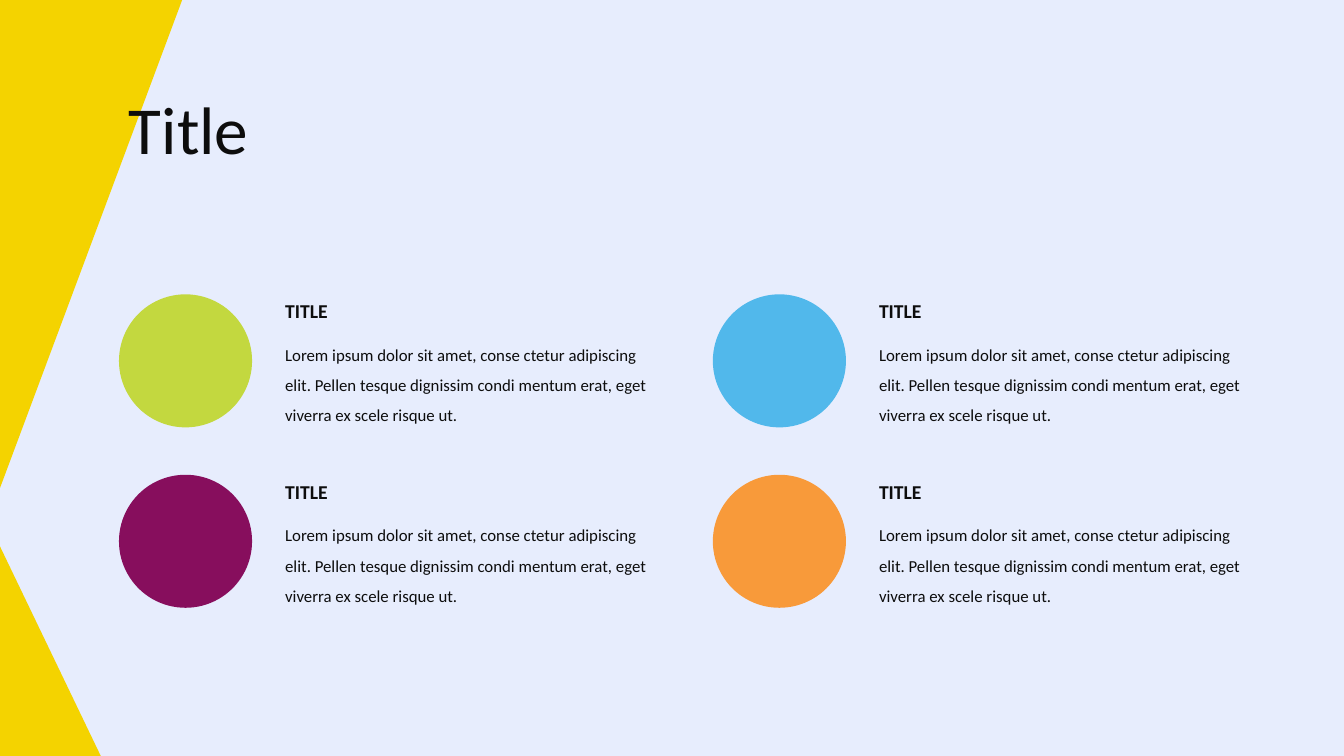
from pptx import Presentation, util as u
from pptx.dml.color import RGBColor
from pptx.enum import shapes, text

COLORS = {"background": "E7EDFD", "wedge": "F4D300", "ink": "0D0D0D",
          "green": "C3D83F", "blue": "51B8EB", "purple": "870E5D", "orange": "F89A3A"}
BODY = ("Lorem ipsum dolor sit amet, conse ctetur adipiscing elit. Pellen tesque "
        "dignissim condi mentum erat, eget viverra ex scele risque ut.")

deck = Presentation()
deck.slide_width, deck.slide_height = u.Inches(13.33), u.Inches(7.5)
slide = deck.slides.add_slide(deck.slide_layouts[6])
slide.background.fill.solid()
slide.background.fill.fore_color.rgb = RGBColor.from_string(COLORS["background"])


def add_figure(preset, color, *box):
    figure = slide.shapes.add_shape(preset, *map(u.Inches, box))
    figure.shadow.inherit = False
    figure.fill.solid()
    figure.fill.fore_color.rgb = RGBColor.from_string(COLORS[color])
    figure.line.fill.background()
    return figure


def add_words(words, size, box, bold=False, spacing=None):
    frame = slide.shapes.add_textbox(*map(u.Inches, box)).text_frame
    frame.word_wrap = True
    frame.auto_size = text.MSO_AUTO_SIZE.SHAPE_TO_FIT_TEXT
    paragraph = frame.paragraphs[0]
    paragraph.line_spacing = spacing
    run = paragraph.add_run()
    run.text = words
    run.font.name, run.font.size, run.font.bold = "Calibri", u.Pt(size), bold
    run.font.color.rgb = RGBColor.from_string(COLORS["ink"])


# Yellow wedges on the left edge
triangle = shapes.MSO_SHAPE.RIGHT_TRIANGLE
add_figure(triangle, "wedge", 0, 5.42, 1, 2.08)
upper_wedge = add_figure(triangle, "wedge", 0, -0.01, 1.81, 4.85)
upper_wedge.rotation = 180
upper_wedge._element.spPr.xfrm.set("flipH", "1")

# Slide title
left = 1.18
add_words("Title", 48, (left, 0.82, 3.29, 0.91))

# Two-by-two grid of topics
top, column_step, row_step = 2.92, 5.89, 1.79
circle_size, text_offset = 1.32, 1.55
topics = [["green", "blue"], ["purple", "orange"]]
for row, row_colors in enumerate(topics):
    for column, color in enumerate(row_colors):
        x, y = left + column * column_step, top + row * row_step
        add_figure(shapes.MSO_SHAPE.OVAL, color, x, y, circle_size, circle_size)
        add_words("TITLE", 14, (x + text_offset, y, 1.46, 0.34), bold=True)
        add_words(BODY, 12, (x + text_offset, y + 0.35, 3.94, 1.01), spacing=1.5)

deck.save("out.pptx")
